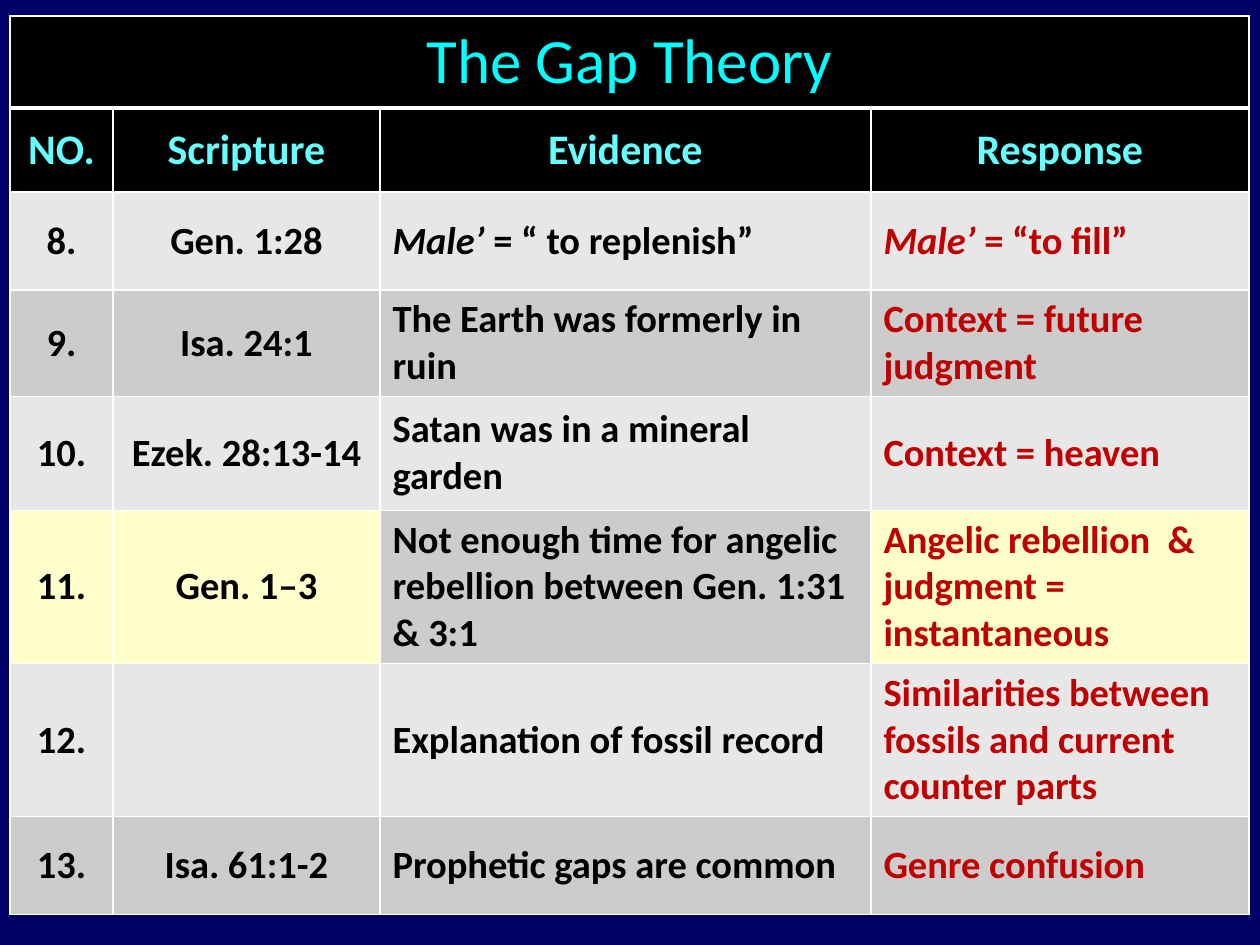
"""Build the Gap Theory slide: a titled table of evidence and responses."""
from lxml import etree
from pptx import Presentation
from pptx import util as u
from pptx.dml.color import RGBColor
from pptx.enum import text
from pptx.oxml import ns

NAVY = RGBColor(0x00, 0x00, 0x66)
BLACK = RGBColor(0x00, 0x00, 0x00)
CYAN = RGBColor(0x00, 0xFF, 0xFF)
PALE_CYAN = RGBColor(0x66, 0xFF, 0xFF)
RED = RGBColor(0xC0, 0x00, 0x00)
LIGHT = RGBColor(0xE7, 0xE7, 0xE7)
GREY = RGBColor(0xCC, 0xCC, 0xCC)
YELLOW = RGBColor(0xFF, 0xFF, 0xCC)
WHITE = RGBColor(0xFF, 0xFF, 0xFF)

TITLE = "The Gap Theory"
HEADINGS = ("NO.", "Scripture", "Evidence", "Response")
ITALIC_WORD = "Male’"
ARGUMENTS = [
    ("8.", "Gen. 1:28", "Male’ = “ to replenish”", "Male’ = “to fill”"),
    ("9.", "Isa. 24:1", "The Earth was formerly in ruin", "Context = future judgment"),
    ("10.", "Ezek. 28:13-14", "Satan was in a mineral garden", "Context = heaven"),
    ("11.", "Gen. 1‒3", "Not enough time for angelic rebellion between Gen. 1:31 & 3:1",
     "Angelic rebellion  & judgment = instantaneous"),
    ("12.", "", "Explanation of fossil record",
     "Similarities between fossils and current counter parts"),
    ("13.", "Isa. 61:1-2", "Prophetic gaps are common", "Genre confusion"),
]
HIGHLIGHTS = {("11.", 0), ("11.", 1), ("11.", 3)}

COLUMN_WIDTHS = (103, 267, 491, 378)
ROW_HEIGHTS = (92, 84, 98, 98, 114, 141, 141, 98)
LEFT, TOP = 10, 16
PX = u.Inches(1) // 126

TITLE_FONT = {"size": u.Pt(36), "bold": False}
HEADING_FONT = {"size": u.Pt(24), "bold": True}
BODY_FONT = {"size": u.Pt(22), "bold": True}


def add_borders(cell, widths):
    properties = cell._tc.get_or_add_tcPr()
    for position, (side, points) in enumerate(widths.items()):
        line = etree.Element(ns.qn(f"a:ln{side}"), w=str(u.Pt(points)))
        fill = etree.SubElement(line, ns.qn("a:solidFill"))
        etree.SubElement(fill, ns.qn("a:srgbClr"), val=str(WHITE))
        properties.insert(position, line)


def fill_cell(cell, words, font, color, background, centred):
    cell.fill.solid()
    cell.fill.fore_color.rgb = background
    cell.vertical_anchor = text.MSO_ANCHOR.MIDDLE
    paragraph = cell.text_frame.paragraphs[0]
    paragraph.alignment = text.PP_ALIGN.CENTER if centred else text.PP_ALIGN.LEFT
    before, italic, after = words.partition(ITALIC_WORD)
    for part in filter(None, (before, italic, after)):
        run = paragraph.add_run()
        run.text = part
        for attribute, value in {**font, "name": "Calibri", "italic": part == ITALIC_WORD}.items():
            setattr(run.font, attribute, value)
        run.font.color.rgb = color


def main():
    deck = Presentation()
    deck.slide_width, deck.slide_height = 1260 * PX, 945 * PX
    slide = deck.slides.add_slide(deck.slide_layouts[6])
    slide.background.fill.solid()
    slide.background.fill.fore_color.rgb = NAVY

    table = slide.shapes.add_table(
        len(ROW_HEIGHTS), len(COLUMN_WIDTHS), LEFT * PX, TOP * PX,
        sum(COLUMN_WIDTHS) * PX, sum(ROW_HEIGHTS) * PX).table
    for column, width in zip(table.columns, COLUMN_WIDTHS):
        column.width = width * PX
    for row, height in zip(table.rows, ROW_HEIGHTS):
        row.height = height * PX

    table.cell(0, 0).merge(table.cell(0, len(HEADINGS) - 1))
    fill_cell(table.cell(0, 0), TITLE, TITLE_FONT, CYAN, BLACK, True)
    for col, heading in enumerate(HEADINGS):
        fill_cell(table.cell(1, col), heading, HEADING_FONT, PALE_CYAN, BLACK, True)
    for index, argument in enumerate(ARGUMENTS):
        band = GREY if index % 2 else LIGHT
        for col, words in enumerate(argument):
            background = YELLOW if (argument[0], col) in HIGHLIGHTS else band
            color = RED if col == 3 else BLACK
            fill_cell(table.cell(index + 2, col), words, BODY_FONT, color, background, col < 2)

    for index, row in enumerate(table.rows):
        for cell in row.cells:
            add_borders(cell, {"L": 1, "R": 1, "T": 3 if index == 1 else 1,
                               "B": 3 if index == 0 else 1})
    deck.save("out.pptx")


if __name__ == "__main__":
    main()
